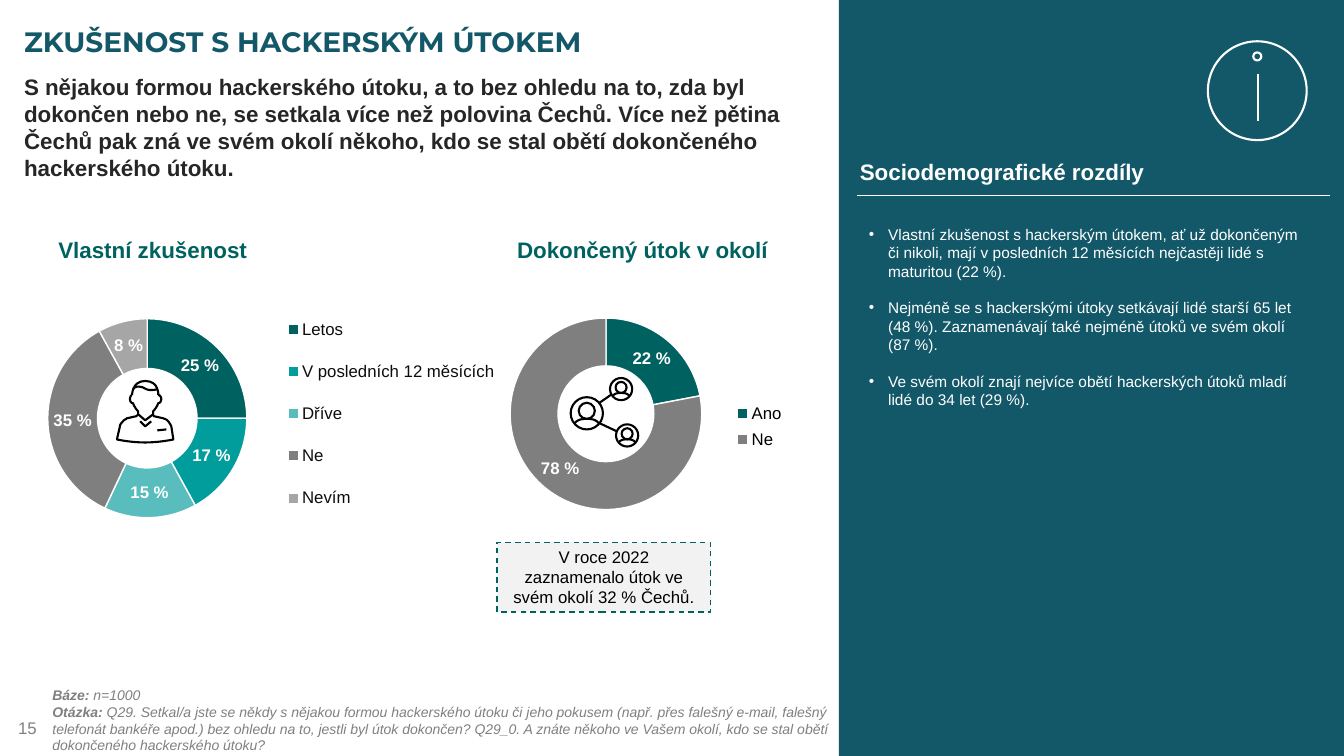
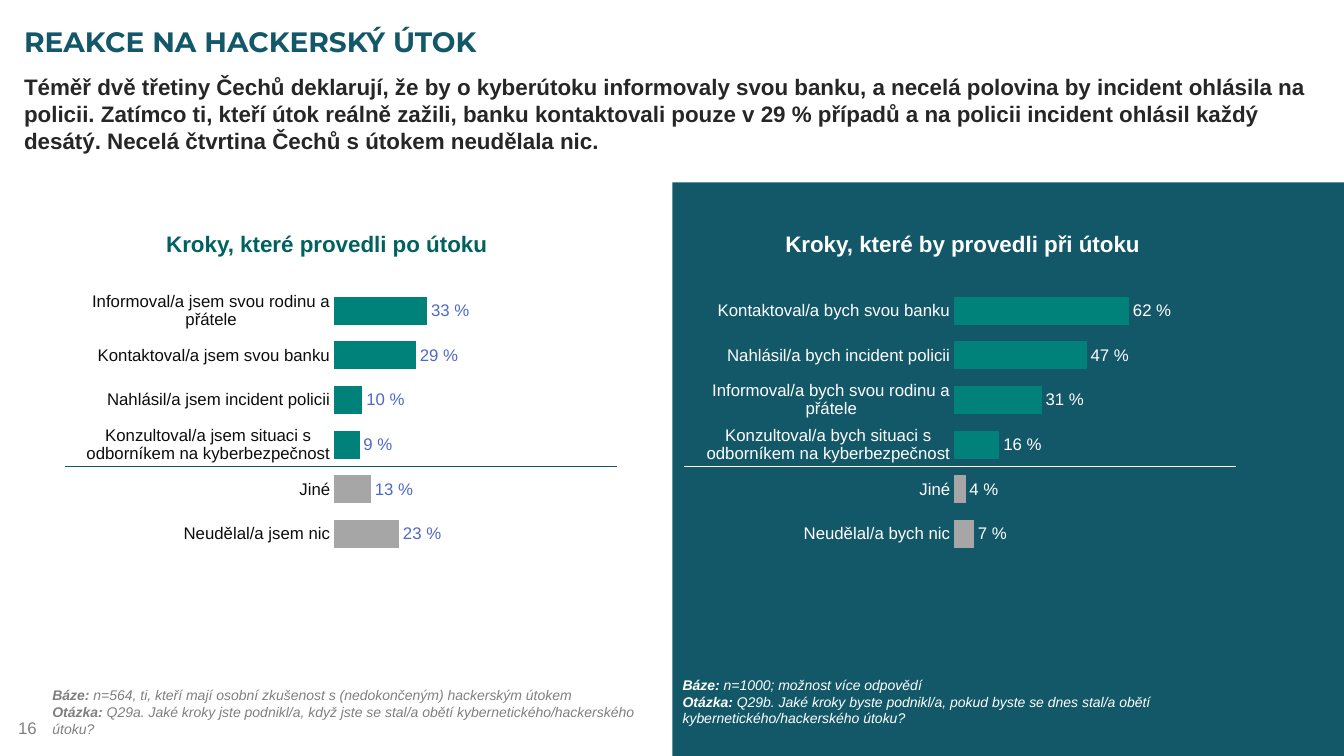
"""Builds two survey slides about experience with and reactions to hacker attacks."""
from lxml import etree
from pptx import Presentation
from pptx.chart.data import CategoryChartData
from pptx.dml.color import RGBColor
from pptx.enum.chart import XL_CHART_TYPE, XL_LABEL_POSITION, XL_LEGEND_POSITION, XL_TICK_MARK
from pptx.enum.dml import MSO_LINE
from pptx.enum.shapes import MSO_CONNECTOR, MSO_SHAPE
from pptx.enum.text import MSO_ANCHOR, PP_ALIGN
from pptx.oxml.ns import qn
from pptx.util import Pt

DOUGHNUT, BAR = XL_CHART_TYPE.DOUGHNUT, XL_CHART_TYPE.BAR_CLUSTERED
OUTSIDE_END = XL_LABEL_POSITION.OUTSIDE_END
LEGEND_RIGHT = XL_LEGEND_POSITION.RIGHT
NO_TICK = XL_TICK_MARK.NONE
DASH = MSO_LINE.DASH
STRAIGHT = MSO_CONNECTOR.STRAIGHT
RECTANGLE, OVAL = MSO_SHAPE.RECTANGLE, MSO_SHAPE.OVAL
TOP, MIDDLE = MSO_ANCHOR.TOP, MSO_ANCHOR.MIDDLE
LEFT, CENTER = PP_ALIGN.LEFT, PP_ALIGN.CENTER

PX = 9144
WIDTH, HEIGHT = 1333, 750
PERCENT = r'#,##0\ "%";\-#,##0"%"'
COLORS = {
    "panel": "135868", "heading": "006260", "body": "262626", "muted": "808080",
    "white": "FFFFFF", "black": "000000", "legend": "0D0D0D", "callout": "F2F2F2",
    "turquoise": "009D9C", "aqua": "58BDBC", "gray": "7F7F7F", "silver": "A6A6A6",
    "bar": "00827A", "value": "4E68CA",
}

EXPERIENCE = {
    "page": "15",
    "title": "ZKUŠENOST S HACKERSKÝM ÚTOKEM",
    "panel": (832, 0, 501, 750),
    "lead": "S nějakou formou hackerského útoku, a to bez ohledu na to, zda byl dokončen nebo ne, "
            "se setkala více než polovina Čechů. Více než pětina Čechů pak zná ve svém okolí někoho, "
            "kdo se stal obětí dokončeného hackerského útoku.",
    "lead_width": 818,
    "headings": [
        ("Sociodemografické rozdíly", (843, 152, 400, 37), "white"),
        ("Vlastní zkušenost", (48, 229, 238, 37), "heading"),
        ("Dokončený útok v okolí", (503, 229, 282, 37), "heading"),
    ],
    "footers": [
        ((52, 681, 780, 67), "muted", "n=1000",
         "Q29. Setkal/a jste se někdy s nějakou formou hackerského útoku či jeho pokusem (např. přes "
         "falešný e-mail, falešný telefonát bankéře apod.) bez ohledu na to, jestli byl útok dokončen? "
         "Q29_0. A znáte někoho ve Vašem okolí, kdo se stal obětí dokončeného hackerského útoku?"),
    ],
    "rules": [((850, 194), (1319, 194), "white")],
}
REACTION = {
    "page": "16",
    "title": "REAKCE NA HACKERSKÝ ÚTOK",
    "panel": (667, 181, 666, 569),
    "lead": "Téměř dvě třetiny Čechů deklarují, že by o kyberútoku informovaly svou banku, a necelá "
            "polovina by incident ohlásila na policii. Zatímco ti, kteří útok reálně zažili, banku "
            "kontaktovali pouze v 29 % případů a na policii incident ohlásil každý desátý. Necelá "
            "čtvrtina Čechů s útokem neudělala nic.",
    "lead_width": 1305,
    "headings": [
        ("Kroky, které provedli po útoku", (155, 223, 346, 37), "heading"),
        ("Kroky, které by provedli při útoku", (769, 223, 382, 37), "white"),
    ],
    "footers": [
        ((52, 681, 614, 50), "muted",
         "n=564, ti, kteří mají osobní zkušenost s (nedokončeným) hackerským útokem",
         "Q29a. Jaké kroky jste podnikl/a, když jste se stal/a obětí kybernetického/hackerského útoku?"),
        ((677, 671, 614, 50), "white", "n=1000; možnost více odpovědí",
         "Q29b. Jaké kroky byste podnikl/a, pokud byste se dnes stal/a obětí "
         "kybernetického/hackerského útoku?"),
    ],
    "rules": [((64, 463), (612, 463), "panel"), ((678, 463), (1226, 463), "white")],
}
DIFFERENCES = [
    "Vlastní zkušenost s hackerským útokem, ať už dokončeným či nikoli, mají v posledních "
    "12 měsících nejčastěji lidé s maturitou (22 %).",
    "Nejméně se s hackerskými útoky setkávají lidé starší 65 let (48 %). Zaznamenávají také "
    "nejméně útoků ve svém okolí (87 %).",
    "Ve svém okolí znají nejvíce obětí hackerských útoků mladí lidé do 34 let (29 %).",
]
CALLOUT = "V roce 2022 zaznamenalo útok ve svém okolí 32 % Čechů."

DOUGHNUTS = [
    {"box": (38, 228, 470, 440), "plot": (0.02, 0.2, 0.42, 0.45),
     "legend": (0.51, 0.15, 0.47, 0.53), "legend_color": "legend",
     "points": [("Letos", 25, "heading"), ("V posledních 12 měsících", 17, "turquoise"),
                ("Dříve", 15, "aqua"), ("Ne", 35, "gray"), ("Nevím", 8, "silver")]},
    {"box": (481, 243, 500, 419), "plot": (0.05, 0.17, 0.38, 0.46),
     "legend": (0.48, 0.36, 0.13, 0.14), "legend_color": "black",
     "points": [("Ano", 22, "heading"), ("Ne", 78, "gray")]},
]
BARS = [
    {"box": (52, 260, 559, 292), "category_color": "legend", "value_color": "value",
     "points": [("Informoval/a jsem svou rodinu a přátele", 33, "bar"),
                ("Kontaktoval/a jsem svou banku", 29, "bar"),
                ("Nahlásil/a jsem incident policii", 10, "bar"),
                ("Konzultoval/a jsem situaci s odborníkem na kyberbezpečnost", 9, "bar"),
                ("Jiné", 13, "silver"), ("Neudělal/a jsem nic", 23, "silver")]},
    {"box": (667, 260, 559, 292), "category_color": "white", "value_color": "white",
     "points": [("Kontaktoval/a bych svou banku", 62, "bar"),
                ("Nahlásil/a bych incident policii", 47, "bar"),
                ("Informoval/a bych svou rodinu a přátele", 31, "bar"),
                ("Konzultoval/a bych situaci s odborníkem na kyberbezpečnost", 16, "bar"),
                ("Jiné", 4, "silver"), ("Neudělal/a bych nic", 7, "silver")]},
]

PERSON_PATHS = [
    [(150, 418), (144, 423), (139, 418)],
    [(157, 392), (159, 392, 160, 394, 160, 396), (160, 398, 159, 400, 157, 400),
     (156, 403, 154, 406, 152, 408), (152, 411), (152, 412, 152, 412, 153, 413), (162, 415),
     (164, 416, 165, 416, 166, 417), (168, 419, 169, 421, 170, 423), (172, 436),
     (172, 436, 159, 439, 144, 439), (129, 439, 116, 436, 116, 436), (119, 423),
     (119, 421, 121, 419, 123, 417), (124, 416, 125, 416, 126, 415), (135, 413),
     (136, 412, 137, 412, 137, 411), (137, 408), (135, 406, 133, 403, 132, 400),
     (130, 400, 129, 398, 129, 396), (129, 394, 130, 392, 131, 392)],
    [(157, 392), (157, 392, 158, 378, 144, 378), (131, 378, 131, 392, 131, 392)],
    [(132, 386), (133, 385, 134, 384, 135, 384), (137, 383, 139, 384, 141, 384),
     (143, 385, 146, 387, 149, 387), (151, 387, 154, 387, 156, 386)],
    [(152, 411), (144, 417), (137, 411)],
    [(156, 427), (165, 426)],
]
NETWORK_NODES = [(582, 410, 16), (616, 386, 11), (622, 432, 11)]
NETWORK_LINKS = [((607, 391), (594, 400)), ((595, 420), (612, 428))]
SHOULDERS = [(-0.76, 0.63), (-0.6, 0.45, -0.45, 0.35, 0, 0.35), (0.45, 0.35, 0.6, 0.45, 0.76, 0.63)]


def emu(lengths):
    return [round(length * PX) for length in lengths]


def rgb(name):
    return RGBColor.from_string(COLORS[name])


def style(font, size, color, bold=False, italic=False, face="Arial"):
    font.name, font.size, font.bold, font.italic = face, Pt(size), bold, italic
    font.color.rgb = rgb(color)


def add_text(slide, box, text, size, color, bold=False, face="Arial", anchor=TOP, insets=(10, 5)):
    frame = slide.shapes.add_textbox(*emu(box)).text_frame
    frame.word_wrap, frame.vertical_anchor = True, anchor
    across, down = emu(insets)
    frame.margin_left = frame.margin_right = across
    frame.margin_top = frame.margin_bottom = down
    frame.text = text
    for para in frame.paragraphs:
        para.alignment = LEFT
        for span in para.runs:
            style(span.font, size, color, bold, face=face)
    return frame


def outline(shape, color, width):
    shape.line.color.rgb, shape.line.width = rgb(color), Pt(width)


def add_box(shapes, kind, box, fill=None, line=None, width=1.5):
    shape = shapes.add_shape(kind, *emu(box))
    shape.shadow.inherit = False
    if fill:
        shape.fill.solid()
        shape.fill.fore_color.rgb = rgb(fill)
    else:
        shape.fill.background()
    if line:
        outline(shape, line, width)
    else:
        shape.line.fill.background()
    return shape


def add_circle(shapes, x, y, radius, color):
    add_box(shapes, OVAL, (x - radius, y - radius, 2 * radius, 2 * radius), line=color)


def add_line(shapes, start, end, color, width):
    line = shapes.add_connector(STRAIGHT, *emu(start + end))
    outline(line, color, width)
    etree.SubElement(line._element.spPr, qn("a:effectLst"))


def flatten(path, steps=8):
    points = [path[0]]
    for part in path[1:]:
        if len(part) == 2:
            points.append(part)
            continue
        corners = [points[-1], part[:2], part[2:4], part[4:]]
        for step in range(1, steps + 1):
            t = step / steps
            weights = ((1 - t) ** 3, 3 * t * (1 - t) ** 2, 3 * t * t * (1 - t), t ** 3)
            points.append(tuple(sum(w * c[axis] for w, c in zip(weights, corners)) for axis in (0, 1)))
    return points


def add_path(shapes, points, color="black"):
    start, *rest = [emu(point) for point in points]
    builder = shapes.build_freeform(*start, scale=1.0)
    builder.add_line_segments(rest, close=False)
    shape = builder.convert_to_shape()
    shape.shadow.inherit = False
    shape.fill.background()
    outline(shape, color, 1.5)


def add_info_icon(slide):
    shapes = slide.shapes.add_group_shape().shapes
    add_circle(shapes, 1247, 90, 49, "white")
    add_line(shapes, (1248, 73), (1248, 120), "white", 1.5)
    add_circle(shapes, 1247, 56, 4, "white")


def add_person_icon(slide):
    shapes = slide.shapes.add_group_shape().shapes
    for path in PERSON_PATHS:
        add_path(shapes, flatten(path))


def add_network_icon(slide):
    shapes = slide.shapes.add_group_shape().shapes
    for start, end in NETWORK_LINKS:
        add_line(shapes, start, end, "black", 1.5)
    for x, y, radius in NETWORK_NODES:
        add_circle(shapes, x, y, radius, "black")
        add_circle(shapes, x, y - 0.15 * radius, radius / 2, "black")
        add_path(shapes, [(x + radius * dx, y + radius * dy) for dx, dy in flatten(SHOULDERS)])


def set_layout(parent, index, fractions, inner=False):
    for old in parent.findall(qn("c:layout")):
        parent.remove(old)
    layout = etree.Element(qn("c:layout"))
    manual = etree.SubElement(layout, qn("c:manualLayout"))
    entries = [("layoutTarget", "inner")] if inner else []
    entries += [("xMode", "edge"), ("yMode", "edge"), *zip("xywh", fractions)]
    for tag, value in entries:
        etree.SubElement(manual, qn("c:" + tag)).set("val", str(value))
    parent.insert(index, layout)


def add_chart(slide, kind, item, plot_box, label_color, bold):
    names, values, colors = zip(*item["points"])
    data = CategoryChartData()
    data.categories = names
    data.add_series("Series 1", values)
    chart = slide.shapes.add_chart(kind, *emu(item["box"]), data).chart
    chart.has_title = chart.has_legend = False
    style(chart.font, 10, "black")
    set_layout(chart._chartSpace.chart.plotArea, 0, plot_box, inner=True)
    plot = chart.plots[0]
    plot.vary_by_categories = kind == DOUGHNUT
    plot.has_data_labels = True
    labels = plot.data_labels
    labels.show_value, labels.show_percentage = True, False
    labels.number_format, labels.number_format_is_linked = PERCENT, False
    style(labels.font, 12, label_color, bold)
    for index, color in enumerate(colors):
        form = plot.series[0].points[index].format
        form.fill.solid()
        form.fill.fore_color.rgb = rgb(color)
        if kind == DOUGHNUT:
            outline(form, "white", 1)
    return chart


def add_doughnut(slide, item):
    chart = add_chart(slide, DOUGHNUT, item, item["plot"], "white", True)
    chart.has_legend = True
    chart.legend.position, chart.legend.include_in_layout = LEGEND_RIGHT, False
    style(chart.legend.font, 12, item["legend_color"])
    set_layout(chart.legend._element, 1, item["legend"])


def add_bars(slide, item):
    chart = add_chart(slide, BAR, item, (0.5, 0.09, 0.5, 0.91), item["value_color"], False)
    chart.plots[0].gap_width = 60
    chart.plots[0].data_labels.position = OUTSIDE_END
    steps, scale = chart.category_axis, chart.value_axis
    steps.reverse_order = True
    steps.major_tick_mark = steps.minor_tick_mark = NO_TICK
    steps.format.line.fill.background()
    style(steps.tick_labels.font, 12, item["category_color"])
    scale.minimum_scale, scale.maximum_scale = 0, 100
    scale.has_major_gridlines = scale.visible = False


def add_footer(slide, box, color, base, question):
    frame = add_text(slide, box, "", 10, color, insets=(0, 0))
    for para, label, text in ((frame.paragraphs[0], "Báze: ", base),
                              (frame.add_paragraph(), "Otázka: ", question)):
        for words, bold in ((label, True), (text, False)):
            span = para.add_run()
            span.text = words
            style(span.font, 10, color, bold, italic=True)


def add_differences(slide):
    frame = add_text(slide, (852, 218, 455, 214), "\n".join(DIFFERENCES), 11, "white")
    for index, para in enumerate(frame.paragraphs):
        properties = para._p.get_or_add_pPr()
        properties.set("marL", str(19 * PX))
        properties.set("indent", str(-19 * PX))
        etree.SubElement(properties, qn("a:buFont")).set("typeface", "Arial")
        etree.SubElement(properties, qn("a:buChar")).set("char", "•")
        if index:
            para.space_before = Pt(13)


def add_callout(slide):
    box = add_box(slide.shapes, RECTANGLE, (493, 538, 212, 69), "callout", "heading", 1)
    box.line.dash_style = DASH
    frame = box.text_frame
    frame.word_wrap, frame.vertical_anchor = True, MIDDLE
    frame.text = CALLOUT
    para = frame.paragraphs[0]
    para.alignment = CENTER
    style(para.runs[0].font, 12, "black")


def add_page(deck, content):
    slide = deck.slides.add_slide(deck.slide_layouts[6])
    add_text(slide, (5, 702, 311, 40), content["page"], 12, "muted", anchor=MIDDLE, insets=(13, 7))
    add_box(slide.shapes, RECTANGLE, content["panel"], "panel")
    add_text(slide, (14, 14, 1305, 53), content["title"], 20, "panel", True, "Montserrat", MIDDLE)
    add_text(slide, (14, 68, content["lead_width"], 70), content["lead"], 16, "body", True)
    for footer in content["footers"]:
        add_footer(slide, *footer)
    for text, box, color in content["headings"]:
        add_text(slide, box, text, 16, color, True)
    return slide


def add_rules(slide, content):
    for start, end, color in content["rules"]:
        add_line(slide.shapes, start, end, color, 0.5)


def main():
    deck = Presentation()
    deck.slide_width, deck.slide_height = emu((WIDTH, HEIGHT))
    slide = add_page(deck, EXPERIENCE)
    add_differences(slide)
    add_info_icon(slide)
    for item in DOUGHNUTS:
        add_doughnut(slide, item)
    add_person_icon(slide)
    add_network_icon(slide)
    add_callout(slide)
    add_rules(slide, EXPERIENCE)
    slide = add_page(deck, REACTION)
    for item in BARS:
        add_bars(slide, item)
    add_rules(slide, REACTION)
    deck.save("out.pptx")


if __name__ == "__main__":
    main()
